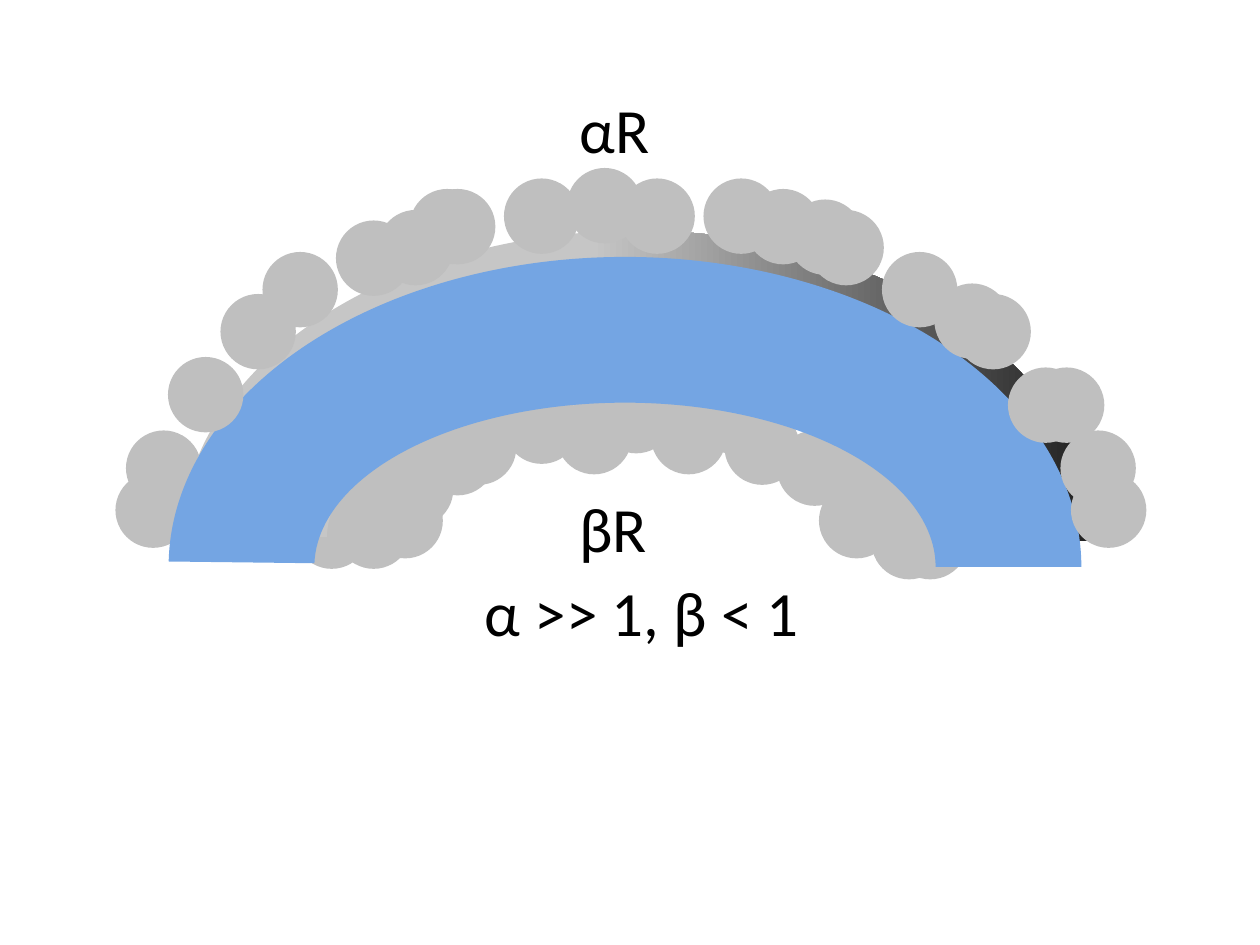
from dataclasses import dataclass

from pptx import Presentation
from pptx.dml.color import RGBColor
from pptx.enum.shapes import MSO_SHAPE
from pptx.enum.text import MSO_AUTO_SIZE
from pptx.util import Cm, Pt

OVAL = MSO_SHAPE.OVAL
BLOCK_ARC = MSO_SHAPE.BLOCK_ARC
FIT_SHAPE = MSO_AUTO_SIZE.SHAPE_TO_FIT_TEXT
NO_RESIZE_WRAP = False
BLANK_LAYOUT = 6

GRID_CM = 2.54 / 12
BEAD_CM = 1.52
ARC_TURNS = (108.41, 0, 0.235)

INNER_BEADS = [
    (62, 36), (53, 38), (34, 38), (35, 46), (48, 37), (31, 43), (36, 43),
    (42, 39), (28, 47), (43, 37), (57, 36), (69, 39), (85, 48), (83, 44),
    (86, 45), (83, 48), (77, 41), (66, 36), (62, 38), (74, 41), (78, 46),
    (35, 41), (40, 40), (32, 47), (12, 41), (11, 45),
]
OUTER_BEADS = [
    (98, 35), (54, 16), (39, 18), (21, 28), (25, 24), (40, 18), (48, 17),
    (59, 17), (71, 18), (101, 41), (91, 28), (96, 35), (102, 45), (77, 20),
    (75, 19), (67, 17), (84, 24), (89, 27), (32, 21), (36, 20), (16, 34),
]
LABELS = [
    ("αR", 54, 8, 1.93),
    ("βR", 54, 46, 1.88),
    ("α >> 1, β < 1", 45, 54, 7.19),
]


@dataclass
class Theme:
    """Colours and type used on the slide."""

    bead: RGBColor = RGBColor(0xBF, 0xBF, 0xBF)
    face: RGBColor = RGBColor(0x74, 0xA5, 0xE3)
    side_light: RGBColor = RGBColor(0xC6, 0xC6, 0xC6)
    side_dark: RGBColor = RGBColor(0x20, 0x20, 0x20)
    text: RGBColor = RGBColor(0, 0, 0)
    font: str = "Calibri"
    size: Pt = Pt(36)


class Diagram:
    """Draws the parts of the curved membrane in one group."""

    def __init__(self, slide, theme):
        self.theme = theme
        self.shapes = slide.shapes.add_group_shape().shapes

    def plain_shape(self, kind, left, top, width, height):
        """Add a shape without outline or shadow."""
        shape = self.shapes.add_shape(
            kind, Cm(left), Cm(top), Cm(width), Cm(height))
        shape.shadow.inherit = False
        shape.line.fill.background()
        return shape

    def beads(self, cells):
        """Add one round bead for each grid cell."""
        for column, row in cells:
            bead = self.plain_shape(
                OVAL, column * GRID_CM, row * GRID_CM, BEAD_CM, BEAD_CM)
            bead.fill.solid()
            bead.fill.fore_color.rgb = self.theme.bead

    def arc(self, left, top):
        """Add one half ring and return it for filling."""
        ring = self.plain_shape(BLOCK_ARC, left, top, 18.4, 12.5)
        for index, value in enumerate(ARC_TURNS):
            ring.adjustments[index] = value
        return ring

    def thick_arc(self, left, top):
        """Add a shaded side and the flat face in front of it."""
        side = self.arc(left + 0.25, top - 0.53)
        side.fill.gradient()
        side.fill.gradient_angle = 0
        shades = ((0.45, self.theme.side_light), (1, self.theme.side_dark))
        for stop, (position, colour) in zip(side.fill.gradient_stops, shades):
            stop.position = position
            stop.color.rgb = colour
        face = self.arc(left, top)
        face.fill.solid()
        face.fill.fore_color.rgb = self.theme.face

    def label(self, text, column, row, width):
        """Add a single line of text at a grid cell."""
        box = self.shapes.add_textbox(
            Cm(column * GRID_CM), Cm(row * GRID_CM), Cm(width), Cm(1.8))
        frame = box.text_frame
        frame.word_wrap = NO_RESIZE_WRAP
        frame.auto_size = FIT_SHAPE
        para = frame.paragraphs[0]
        para.text = text
        para.font.name = self.theme.font
        para.font.size = self.theme.size
        para.font.color.rgb = self.theme.text


def main():
    """Build and save the deck."""
    deck = Presentation()
    deck.slide_width, deck.slide_height = Cm(25.4), Cm(19.05)
    slide = deck.slides.add_slide(deck.slide_layouts[BLANK_LAYOUT])
    diagram = Diagram(slide, Theme())
    diagram.beads(INNER_BEADS)
    diagram.thick_arc(3.4, 5.18)
    diagram.beads(OUTER_BEADS)
    for label in LABELS:
        diagram.label(*label)
    deck.save("out.pptx")


if __name__ == "__main__":
    main()
